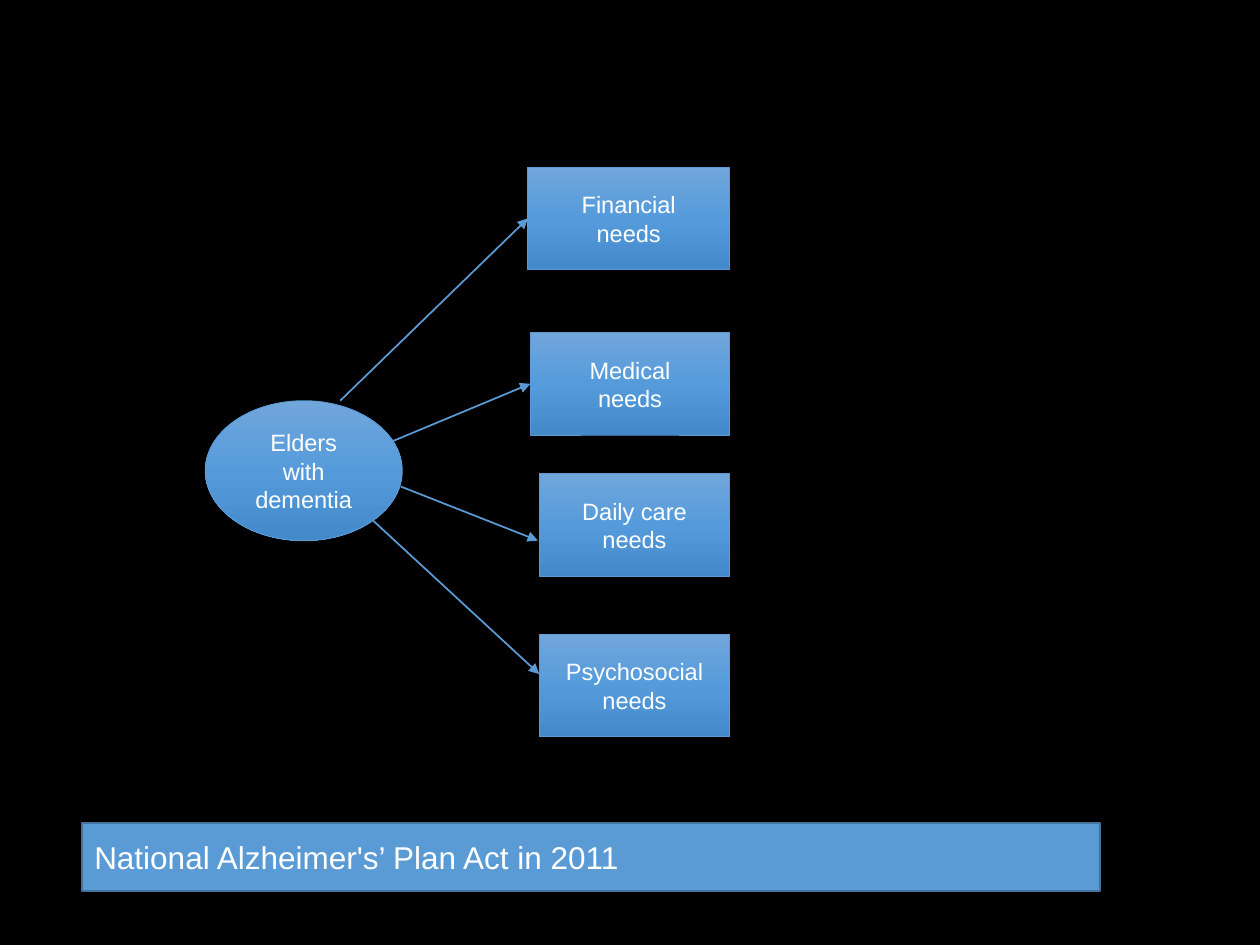
"""Build a slide that maps the needs of elders with dementia."""
from copy import deepcopy

from pptx import Presentation
from pptx.dml.color import RGBColor
from pptx.enum.shapes import MSO_CONNECTOR, MSO_SHAPE
from pptx.enum.text import MSO_ANCHOR, PP_ALIGN
from pptx.oxml.ns import qn
from pptx.util import Pt

RECT, OVAL = MSO_SHAPE.RECTANGLE, MSO_SHAPE.OVAL
LINE = MSO_CONNECTOR.STRAIGHT
LEFT, CENTER = PP_ALIGN.LEFT, PP_ALIGN.CENTER
MIDDLE = MSO_ANCHOR.MIDDLE

BLACK = RGBColor(0x00, 0x00, 0x00)
WHITE = RGBColor(0xFF, 0xFF, 0xFF)
BLUE = RGBColor(0x5B, 0x9B, 0xD5)
NAVY = RGBColor(0x43, 0x73, 0x9E)
FADE = (
    (0, RGBColor(0x71, 0xA6, 0xDB)),
    (0.5, RGBColor(0x55, 0x9B, 0xDB)),
    (1, RGBColor(0x44, 0x8A, 0xCA)),
)

EDGE = 416.9
HIGH = 58.6
NEEDS = (
    ("Financial\nneeds", 301.7, 95.5, (194.4, 229), None),
    ("Medical\nneeds", 303.1, 190, (224.6, 252), None),
    ("Daily care needs", 308.2, 270.7, (229, 278), (307.4, 308.9)),
    ("Psychosocial needs", 308.2, 362.5, (213.1, 297.4), (308.2, 385.2)),
)


def write(shape, text, size=13.5, color=WHITE, align=CENTER, font="Arial"):
    frame = shape.text_frame
    frame.word_wrap = True
    frame.vertical_anchor = MIDDLE
    frame.text = text
    for para in frame.paragraphs:
        para.alignment = align
        para.font.name = font
        para.font.size = Pt(size)
        para.font.color.rgb = color


class Board:
    def __init__(self, slide, line=BLUE, fade=FADE):
        self.slide = slide
        self.line = line
        self.fade = fade

    def paint(self, color):
        fill = self.slide.background.fill
        fill.solid()
        fill.fore_color.rgb = color

    def shape(self, kind, box, line, width):
        shape = self.slide.shapes.add_shape(kind, *map(Pt, box))
        shape.shadow.inherit = False
        shape.line.color.rgb = line
        shape.line.width = Pt(width)
        return shape

    def node(self, kind, box, text):
        shape = self.shape(kind, box, self.line, 0.5)
        shape.fill.gradient()
        shape.fill.gradient_angle = 270
        stops = shape.element.spPr.find(".//" + qn("a:gsLst"))
        stops.insert(1, deepcopy(stops[0]))
        for stop, (place, color) in zip(shape.fill.gradient_stops, self.fade):
            stop.position = place
            stop.color.rgb = color
        write(shape, text)
        return shape

    def banner(self, box, text):
        shape = self.shape(RECT, box, NAVY, 1)
        shape.fill.solid()
        shape.fill.fore_color.rgb = self.line
        write(shape, text, size=18, align=LEFT)

    def arrow(self, start, end, node):
        goal = end or start
        link = self.slide.shapes.add_connector(LINE, *map(Pt, start + goal))
        if end is None:
            link.end_connect(node, 1)
        link.line.color.rgb = self.line
        link.line.width = Pt(1)
        tail = link.line._get_or_add_ln().makeelement(qn("a:tailEnd"), {"type": "triangle"})
        link.line._get_or_add_ln().append(tail)
        props = link.element.spPr
        props.append(props.makeelement(qn("a:effectLst"), {}))


def main():
    deck = Presentation()
    deck.slide_width, deck.slide_height = Pt(720), Pt(540)
    board = Board(deck.slides.add_slide(deck.slide_layouts[6]))
    board.paint(BLACK)
    board.node(OVAL, (117.3, 229, 112.6, 80), "Elders with dementia")
    for text, left, top, start, end in NEEDS:
        node = board.node(RECT, (left, top, EDGE - left, HIGH), text)
        board.arrow(start, end, node)
    board.banner((46.8, 470.2, 582, 38.9), "National Alzheimer's’ Plan Act in 2011")
    deck.save("out.pptx")


if __name__ == "__main__":
    main()
